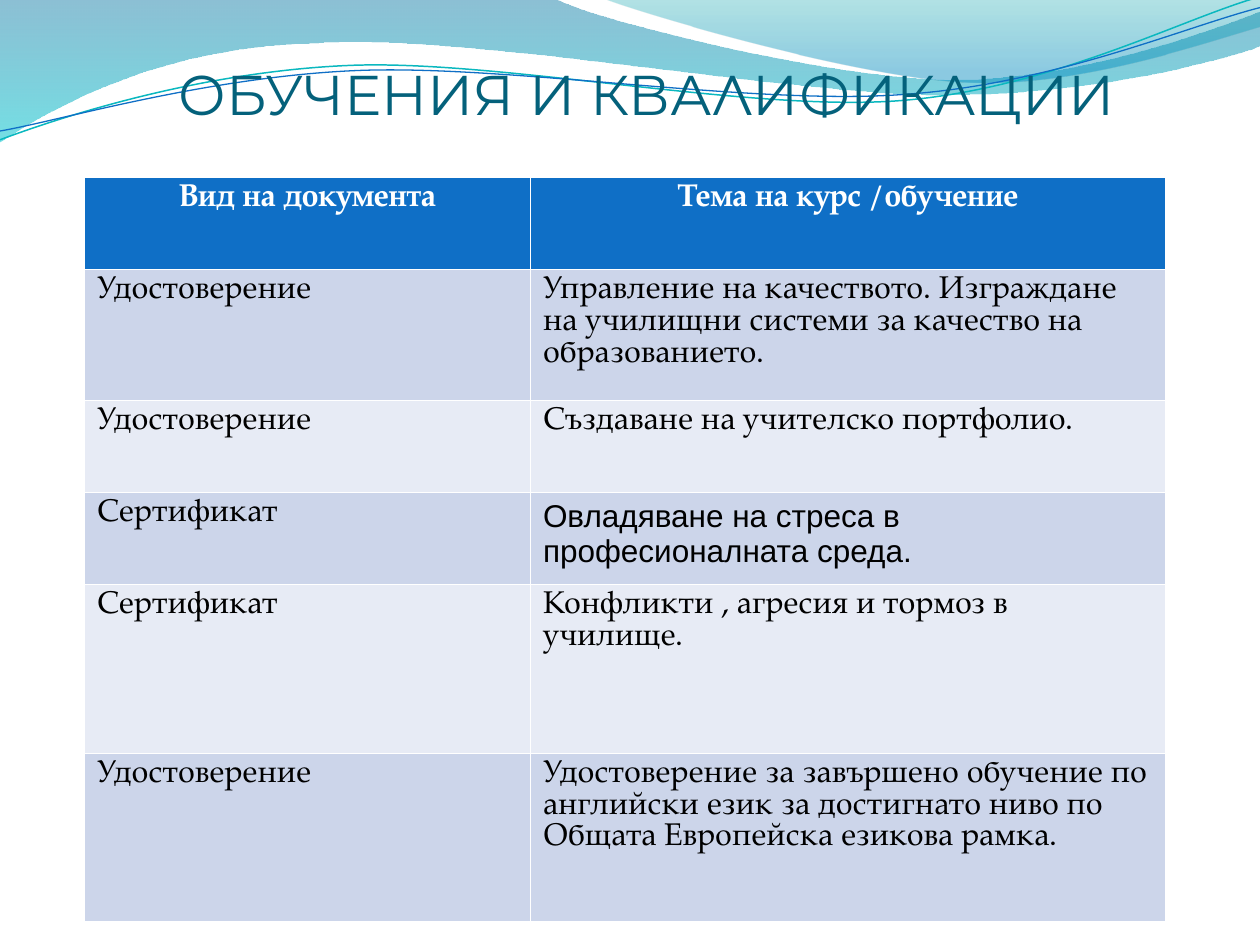
from math import cos, radians, sin

from lxml import etree
from pptx import Presentation
from pptx.dml.color import RGBColor
from pptx.enum.lang import MSO_LANGUAGE_ID
from pptx.enum.text import MSO_ANCHOR, PP_ALIGN
from pptx.oxml.ns import qn
from pptx.util import Inches, Pt

CENTER, LEFT = PP_ALIGN.CENTER, PP_ALIGN.LEFT
BOTTOM = MSO_ANCHOR.BOTTOM
BULGARIAN = MSO_LANGUAGE_ID.BULGARIAN

WHITE = RGBColor(0xFF, 0xFF, 0xFF)
BLACK = RGBColor(0, 0, 0)
BLUE = RGBColor(0x0F, 0x6F, 0xC6)
NAVY = RGBColor(0x04, 0x61, 0x7B)
TEAL = RGBColor(0x0A, 0xB8, 0xBF)
BANDS = RGBColor(0xCC, 0xD5, 0xEA), RGBColor(0xE7, 0xEB, 0xF5)

SERIF, SANS, TITLE = "TeX Gyre Pagella", "Arial", "Montserrat"
TILT = -2.7

# Waves: a frame, then parts (a pair is a line end, six numbers a Bezier
# curve), then gradient stops as position, colour, opacity in percent.
WAVES = [
    ((-0.01, -0.01, 10.02, 1.14),
     [(0, 0), (4.4, -0.01),
      (4.76, 0.17, 6.64, 0.63, 7.58, 0.63),
      (8.53, 0.63, 9.58, 0.26, 10, 0.09), (10.01, 0.36),
      (9.83, 0.44, 8.7, 0.76, 7.46, 0.75),
      (6.22, 0.75, 3.82, 0.28, 2.57, 0.34),
      (1.29, 0.36, 0.46, 0.83, -0.01, 1.13), (0, 0)],
     [(0, RGBColor(0, 0x74, 0xA1), 45), (1, RGBColor(0, 0xC6, 0xCF), 55)]),
    ((4.79, -0.01, 5.21, 0.7),
     [(4.79, -0.01), (5.09, 0.11, 6.82, 0.62, 7.69, 0.65),
      (8.56, 0.69, 9.61, 0.32, 10, 0.21), (10, 0), (4.79, -0.01)],
     [(0, RGBColor(0, 0xA1, 0xA9), 30), (0.8, RGBColor(0, 0x8B, 0xBF), 45)]),
]
STROKES = [
    ((-0.02, 0.22, 10.02, 0.71),
     [(0, 1.11), (0.48, 0.93, 1.58, 0.57, 2.77, 0.52),
      (3.95, 0.47, 5.93, 0.89, 7.13, 0.8),
      (8.33, 0.71, 9.38, 0.15, 9.98, -0.02)], TEAL, 0.85),
    ((-0.02, 0.3, 10.03, 0.58),
     [(0, 1.04), (0.47, 0.96, 1.64, 0.61, 2.83, 0.56),
      (4.03, 0.51, 5.97, 0.84, 7.17, 0.75),
      (8.36, 0.67, 9.41, 0.21, 10, 0.06)], BLUE, 0.75),
]

COLS = [3.54, 5.04]
ROWS = [0.73, 1.04, 0.73, 0.73, 1.34, 1.34]
CELLS = [
    ("Вид на документа", "Тема на курс /обучение"),
    ("Удостоверение", "Управление на качеството. Изграждане на училищни "
                      "системи за качество на образованието."),
    ("Удостоверение", "Създаване на учителско портфолио."),
    ("Сертификат", "Овладяване на стреса в професионалната среда."),
    ("Сертификат", "Конфликти , агресия и тормоз в училище."),
    ("Удостоверение", "Удостоверение за завършено обучение по английски език "
                      "за достигнато ниво по Общата Европейска езикова рамка."),
]
SANS_CELL = (3, 1)


def turn(dot, frame, angle):
    """Undo the tilt of a point and make it relative to the frame."""
    left, top, width, height = frame
    dx, dy = dot[0] - left - width / 2, dot[1] - top - height / 2
    c, s = cos(radians(angle)), sin(radians(angle))
    return (Inches(dx * c + dy * s + width / 2),
            Inches(dy * c - dx * s + height / 2))


def add_curve(slide, frame, parts, close, angle=0):
    runs = [[turn(part[i:i + 2], frame, angle)
             for i in range(0, len(part), 2)] for part in parts]
    pen = slide.shapes.build_freeform(*runs[0][0])
    pen.add_line_segments([run[-1] for run in runs[1:]], close=close)
    shape = pen.convert_to_shape()
    shape.shadow.inherit = False
    for key, value in zip(("left", "top", "width", "height"), frame):
        setattr(shape, key, Inches(value))
    shape.rotation = angle
    # Swap the straight segments for curves
    trail = next(shape._element.iter(qn("a:path")))
    for node in list(trail):
        trail.remove(node)
    trail.set("w", str(shape.width))
    trail.set("h", str(shape.height))
    for i, run in enumerate(runs):
        kind = "cubicBezTo" if len(run) == 3 else "lnTo" if i else "moveTo"
        node = etree.SubElement(trail, qn("a:" + kind))
        for x, y in run:
            etree.SubElement(node, qn("a:pt"), x=str(x), y=str(y))
    if close:
        etree.SubElement(trail, qn("a:close"))
    return shape


def add_wave(slide, frame, parts, stops):
    shape = add_curve(slide, frame, parts, True)
    shape.line.fill.background()
    shape.fill.gradient()
    shape.fill.gradient_angle = 270
    for stop, (place, color, _) in zip(shape.fill.gradient_stops, stops):
        stop.position = place
        stop.color.rgb = color
    tint = list(shape._element.spPr.iter(qn("a:srgbClr")))
    for node, (_, _, alpha) in zip(tint, stops):
        etree.SubElement(node, qn("a:alpha"), val=str(alpha * 1000))


def add_stroke(slide, frame, parts, color, width):
    shape = add_curve(slide, frame, parts, False, TILT)
    shape.fill.background()
    shape.line.color.rgb = color
    shape.line.width = Pt(width)


def put_text(frame, text, color, align=LEFT, **form):
    para = frame.paragraphs[0]
    para.alignment = align
    run = para.add_run()
    run.text = text
    run.font.language_id = BULGARIAN
    for key, value in form.items():
        setattr(run.font, key, value)
    run.font.color.rgb = color


def add_grid(slide):
    table = slide.shapes.add_table(
        len(ROWS), len(COLS), Inches(0.67), Inches(1.41),
        Inches(sum(COLS)), Inches(sum(ROWS))).table
    for col, width in zip(table.columns, COLS):
        col.width = Inches(width)
    for row, height in zip(table.rows, ROWS):
        row.height = Inches(height)
    for r, texts in enumerate(CELLS):
        head = r == 0
        for c, text in enumerate(texts):
            cell = table.cell(r, c)
            cell.fill.solid()
            cell.fill.fore_color.rgb = BLUE if head else BANDS[(r - 1) % 2]
            put_text(cell.text_frame, text, WHITE if head else BLACK,
                     CENTER if head else LEFT, size=Pt(18), bold=head,
                     name=SANS if (r, c) == SANS_CELL else SERIF)


def add_title(slide, text):
    box = slide.shapes.add_textbox(Inches(0.62), Inches(0.31),
                                   Inches(8.91), Inches(0.7))
    frame = box.text_frame
    form = {"word_wrap": True, "vertical_anchor": BOTTOM, "margin_left": 0,
            "margin_top": Inches(0.05), "margin_right": 0, "margin_bottom": 0}
    for key, value in form.items():
        setattr(frame, key, value)
    put_text(frame, text, NAVY, CENTER, size=Pt(32), name=TITLE)


def main():
    deck = Presentation()
    deck.slide_width, deck.slide_height = Inches(10), Inches(7.5)
    slide = deck.slides.add_slide(deck.slide_layouts[6])
    # Wave band at the top
    for wave in WAVES:
        add_wave(slide, *wave)
    for stroke in STROKES:
        add_stroke(slide, *stroke)
    # Content
    add_grid(slide)
    add_title(slide, " ОБУЧЕНИЯ И КВАЛИФИКАЦИИ")
    deck.save("out.pptx")


if __name__ == "__main__":
    main()
